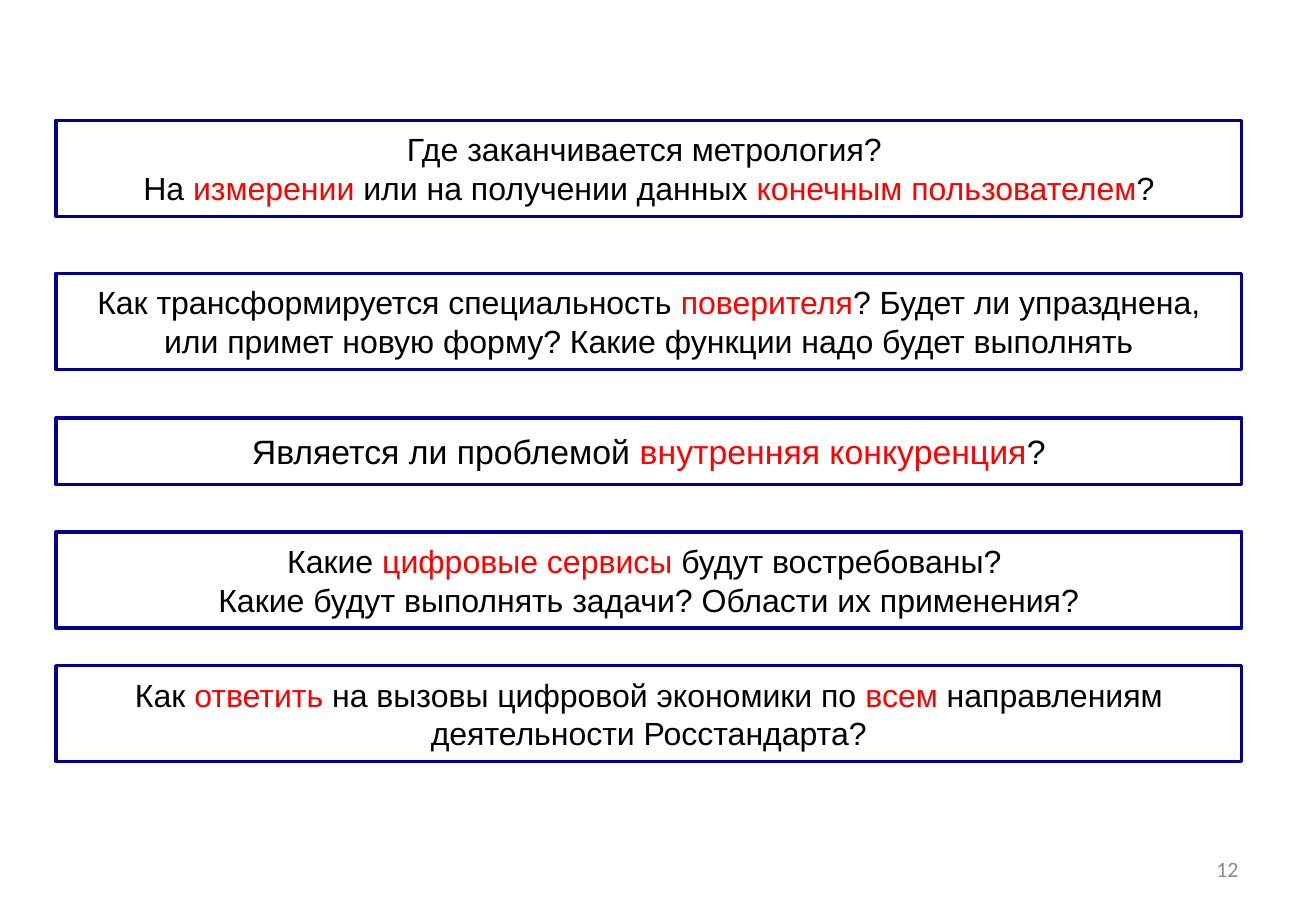
import pptx
import pptx.util
import pptx.dml.color
import pptx.enum.shapes
import pptx.enum.text

PX = 9144
ALIGN = pptx.enum.text.PP_ALIGN
MIDDLE = pptx.enum.text.MSO_ANCHOR.MIDDLE
QUESTIONS = [
    (99, 79, 19, ["Где заканчивается метрология? ",
                  "На *измерении* или на получении данных *конечным пользователем*?"]),
    (225, 79, 19, ["Как трансформируется специальность *поверителя*? Будет ли упразднена, "
                   "или примет новую форму? Какие функции надо будет выполнять"]),
    (344, 55, 20, ["Является ли проблемой *внутренняя конкуренция*?"]),
    (438, 79, 19, ["Какие *цифровые сервисы *будут востребованы? ",
                   "Какие будут выполнять задачи? Области их применения?"]),
    (548, 79, 19, ["Как *ответить* на вызовы цифровой экономики по *всем* направлениям "
                   "деятельности Росстандарта?"]),
]


def color(value):
    """Turn a hex string into a colour."""
    return pptx.dml.color.RGBColor.from_string(value)


def px(*lengths):
    """Turn px lengths into EMU."""
    return [pptx.util.Emu(n * PX) for n in lengths]


def write(tf, lines, size, font, align, base, accent="FF0000"):
    """Fill a text frame, colouring the parts between asterisks."""
    tf.word_wrap = True
    tf.vertical_anchor = MIDDLE
    for i, line in enumerate(lines):
        p = tf.add_paragraph() if i else tf.paragraphs[0]
        p.alignment = align
        p.font.size = pptx.util.Pt(size)
        p.font.name = font
        for j, part in enumerate(line.split("*")):
            r = p.add_run()
            r.text = part
            r.font.color.rgb = color(accent if j % 2 else base)


def question_box(s, x, y, w, h, size, lines):
    """Draw one outlined question."""
    sp = s.shapes.add_shape(pptx.enum.shapes.MSO_SHAPE.RECTANGLE, *px(x, y, w, h))
    sp.shadow.inherit = False
    sp.fill.solid()
    sp.fill.fore_color.rgb = color("FFFFFF")
    sp.line.color.rgb = color("000099")
    sp.line.width = pptx.util.Pt(2)
    write(sp.text_frame, lines, size, "Arial", ALIGN.CENTER, "000000")


def page_number(s, x, y, w, h, number):
    """Place the page number at the right of its box."""
    sp = s.shapes.add_textbox(*px(x, y, w, h))
    write(sp.text_frame, [number], 13, "Calibri", ALIGN.RIGHT, "8C8C8C")


def main():
    """Build and save the slide."""
    prs = pptx.Presentation()
    prs.slide_width, prs.slide_height = px(1083, 750)
    s = prs.slides.add_slide(prs.slide_layouts[6])
    page_number(s, 776, 695, 253, 40, "12")
    for y, h, size, lines in QUESTIONS:
        question_box(s, 46, y, 976, h, size, lines)
    prs.save("out.pptx")


if __name__ == "__main__":
    main()
